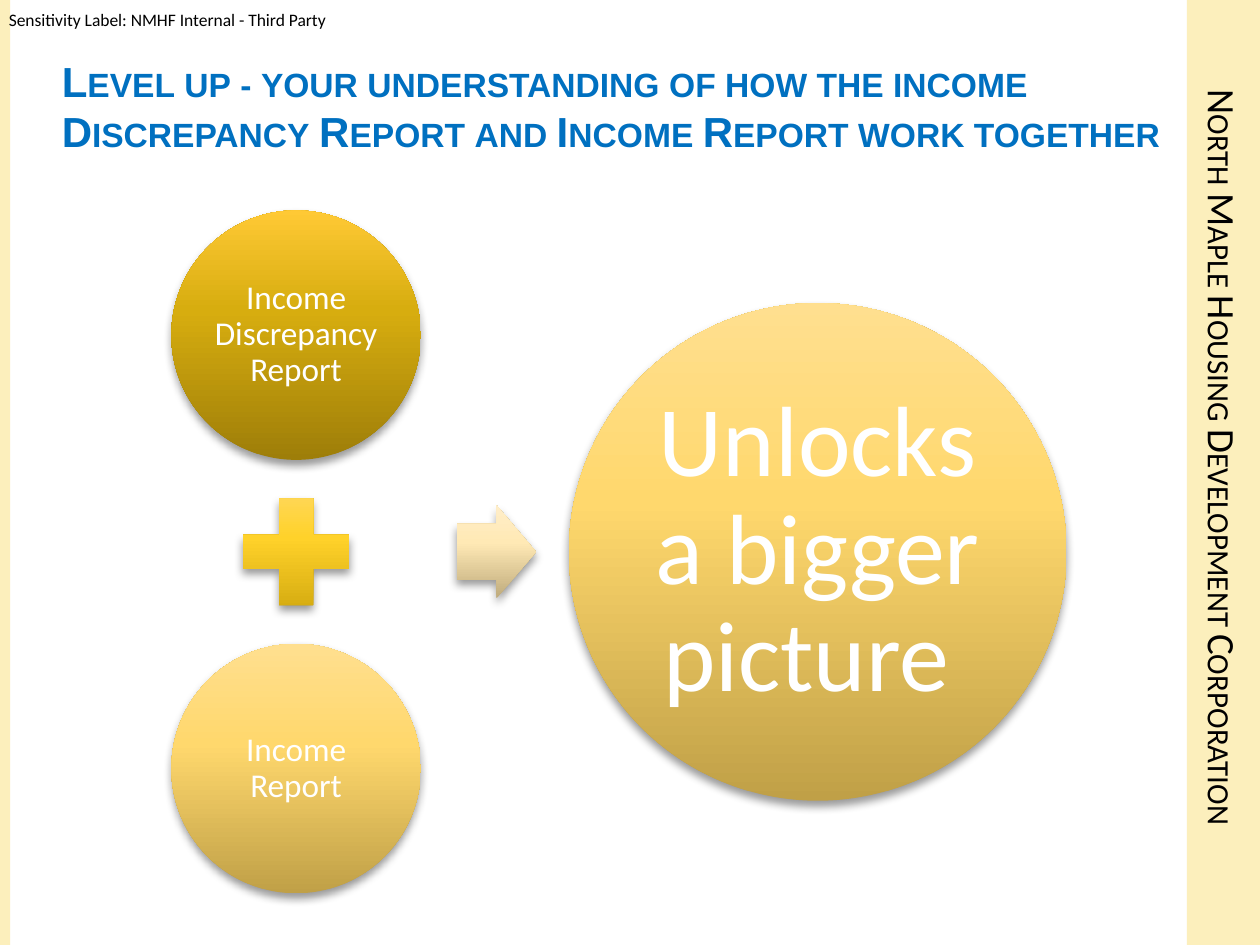
from pptx import Presentation
from pptx.dml.color import RGBColor
from pptx.enum.shapes import MSO_SHAPE as Shape
from pptx.enum.text import MSO_ANCHOR as Anchor, MSO_AUTO_SIZE as AutoSize, PP_ALIGN as Align
from pptx.oxml.ns import qn
from pptx.util import Inches, Pt
from lxml import etree

CREAM = "FCEFBC"
DARK_GOLD = ("9E7E09", "D7AD0F", "FFC935")
BRIGHT_GOLD = ("CCA30B", "FFD22A", "FFD968")
SOFT_GOLD = ("C0A047", "FFD86D", "FFDF8F")
PALE_GOLD = ("BFAB7C", "FFE9B5", "FFEEC9")
STOPS = (0, 60, 100)


def color(value):
    return RGBColor.from_string(value)


def add_color(parent, value):
    return etree.SubElement(parent, qn("a:srgbClr"), val=value)


def write(frame, text, size, hue, font="Calibri", align=Align.LEFT,
          anchor=Anchor.TOP, inset=0.0, bold=False, small_caps=False):
    frame.word_wrap = True
    frame.auto_size = AutoSize.NONE
    frame.vertical_anchor = anchor
    frame.margin_left = frame.margin_right = Inches(inset)
    frame.margin_top = frame.margin_bottom = Inches(inset)
    para = frame.paragraphs[0]
    para.alignment = align
    span = para.add_run()
    span.text = text
    span.font.name = font
    span.font.size = Pt(size)
    span.font.bold = bold
    span.font.color.rgb = color(hue)
    if small_caps:
        span.font._element.set("cap", "small")
    return para


def add_box(page, left, top, width, height):
    return page.shapes.add_textbox(Inches(left), Inches(top), Inches(width), Inches(height))


def add_plain_shape(page, kind, left, top, width, height):
    shape = page.shapes.add_shape(kind, Inches(left), Inches(top), Inches(width), Inches(height))
    shape.shadow.inherit = False
    shape.line.fill.background()
    return shape


def add_bar(page, left, width):
    bar = add_plain_shape(page, Shape.RECTANGLE, left, 0, width, 7.5)
    bar.fill.solid()
    bar.fill.fore_color.rgb = color(CREAM)


def add_gold_shape(page, kind, center_x, center_y, width, height, hues):
    shape = add_plain_shape(page, kind, center_x - width / 2, center_y - height / 2, width, height)
    shape.fill.gradient()
    shape.fill.gradient_angle = 90
    properties = shape._element.spPr
    stops = properties.find(".//" + qn("a:gsLst"))
    for old in list(stops):
        stops.remove(old)
    for position, hue in zip(STOPS, hues):
        add_color(etree.SubElement(stops, qn("a:gs"), pos=str(position * 1000)), hue)
    shadow = etree.SubElement(properties.find(qn("a:effectLst")), qn("a:outerShdw"),
                              blurRad=str(Pt(5.2)), dist=str(Pt(3)), dir="5400000", rotWithShape="0")
    etree.SubElement(add_color(shadow, "000000"), qn("a:alpha"), val="40000")
    return shape


def add_circle(page, center_x, center_y, diameter, hues, text, size, inset):
    circle = add_gold_shape(page, Shape.OVAL, center_x, center_y, diameter, diameter, hues)
    para = write(circle.text_frame, text, size, "FFFFFF", align=Align.CENTER,
                 anchor=Anchor.MIDDLE, inset=inset)
    para.line_spacing = 0.9


def add_frame(page):
    add_bar(page, 9.42, 0.58)
    add_bar(page, 0, 0.08)
    label = add_box(page, 0.07, 0.07, 2.6, 0.17)
    write(label.text_frame, "Sensitivity Label: NMHF Internal - Third Party", 10, "000000")
    banner = add_box(page, 9.42, 0.42, 0.58, 6.42)
    write(banner.text_frame, "North Maple Housing Development Corporation", 22.2, "000000",
          align=Align.CENTER, anchor=Anchor.MIDDLE, inset=0.05, small_caps=True)
    banner.text_frame._txBody.bodyPr.set("vert", "vert")


def add_title(page, text):
    title = page.shapes.title
    title.left, title.top = Inches(0.49), Inches(0.44)
    title.width, title.height = Inches(8.91), Inches(1.02)
    write(title.text_frame, text, 24, "0070C0", font="Arial", bold=True, small_caps=True)


def add_equation(page):
    reports_x, middle_y, offset = 2.35, 4.38, 1.72
    add_circle(page, reports_x, middle_y - offset, 1.98, DARK_GOLD,
               "Income Discrepancy Report", 19, 0.03)
    add_gold_shape(page, Shape.MATH_PLUS, reports_x, middle_y, 1.15, 1.15, BRIGHT_GOLD)
    add_circle(page, reports_x, middle_y + offset, 1.98, SOFT_GOLD, "Income Report", 19, 0.03)
    arrow = add_gold_shape(page, Shape.RIGHT_ARROW, 3.94, middle_y, 0.63, 0.74, PALE_GOLD)
    arrow.adjustments[0] = 0.6
    arrow.adjustments[1] = 0.5
    add_circle(page, 6.49, middle_y, 3.95, SOFT_GOLD, "Unlocks a bigger picture ", 57, 0.08)


def main():
    deck = Presentation()
    deck.slide_width, deck.slide_height = Inches(10), Inches(7.5)
    page = deck.slides.add_slide(deck.slide_layouts[5])
    add_frame(page)
    add_title(page, "Level up - your understanding of how the income "
                    "Discrepancy Report and Income Report work together")
    add_equation(page)
    deck.save("out.pptx")


if __name__ == "__main__":
    main()
